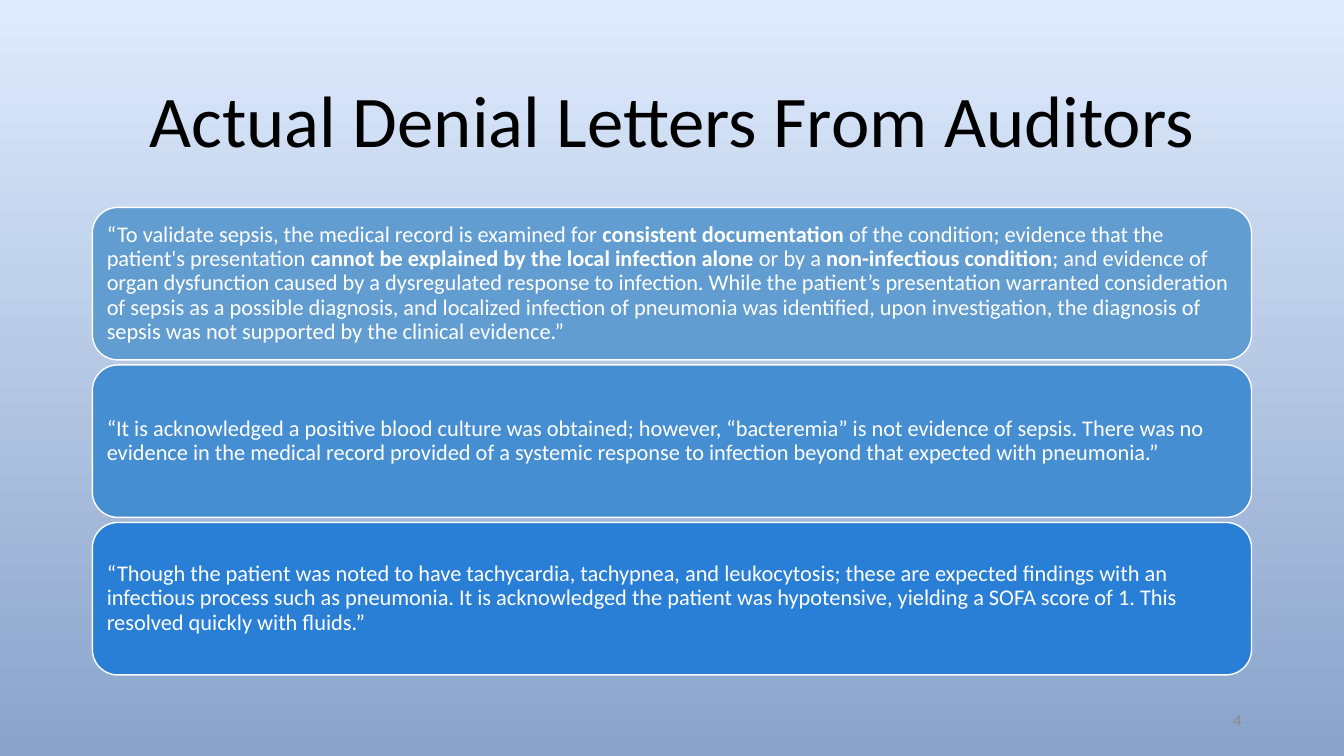
from dataclasses import dataclass

from pptx import Presentation
from pptx.dml.color import RGBColor
from pptx.enum.shapes import MSO_SHAPE
from pptx.enum.text import MSO_ANCHOR, MSO_AUTO_SIZE, PP_ALIGN
from pptx.util import Pt


@dataclass(frozen=True)
class Theme:
    font: str = "Calibri"
    title_size: float = 52
    body_size: float = 16
    number_size: float = 12
    title: str = "000000"
    light: str = "FFFFFF"
    number: str = "8B8B8B"
    bg_top: str = "DFEBFD"
    bg_bottom: str = "89A3CB"
    line_spacing: float = 0.9


@dataclass(frozen=True)
class Run:
    text: str
    bold: bool = False


@dataclass(frozen=True)
class Quote:
    fill: str
    runs: tuple[Run, ...]


THEME = Theme()
LEFT, WIDTH = 66, 828
CARD_TOP, CARD_HEIGHT, CARD_GAP = 148.2, 108.9, 3.6

QUOTES = (
    Quote("629DD1", (
        Run("“To validate sepsis, the medical record is examined for "),
        Run("consistent documentation ", True),
        Run("of the condition; evidence that the patient's presentation "),
        Run("cannot be explained by the local infection alone ", True),
        Run("or by a "),
        Run("non-infectious condition", True),
        Run("; and evidence of organ dysfunction caused by a dysregulated response "
            "to infection. While the patient’s presentation warranted consideration "
            "of sepsis as a possible diagnosis, and localized infection of pneumonia "
            "was identified, upon investigation, the diagnosis of sepsis was not "
            "supported by the clinical evidence.”"),
    )),
    Quote("468ED2", (
        Run("“It is acknowledged a positive blood culture was obtained; however, "
            "“bacteremia” is not evidence of sepsis. There was no evidence in the "
            "medical record provided of a systemic response to infection beyond that "
            "expected with pneumonia.”"),
    )),
    Quote("297FD5", (
        Run("“Though the patient was noted to have tachycardia, tachypnea, and "
            "leukocytosis; these are expected findings with an infectious process "
            "such as pneumonia. It is acknowledged the patient was hypotensive, "
            "yielding a SOFA score of 1. This resolved quickly with fluids.”"),
    )),
)


def rgb(value: str) -> RGBColor:
    return RGBColor.from_string(value)


def write(shape, runs: tuple[Run, ...], size: float, color: str,
          align: PP_ALIGN, inset: float) -> None:
    tf = shape.text_frame
    tf.word_wrap = True
    tf.auto_size = MSO_AUTO_SIZE.NONE
    tf.vertical_anchor = MSO_ANCHOR.MIDDLE
    tf.margin_left = tf.margin_right = tf.margin_top = tf.margin_bottom = Pt(inset)
    p = tf.paragraphs[0]
    p.alignment = align
    p.line_spacing = THEME.line_spacing
    for run in runs:
        r = p.add_run()
        r.text = run.text
        r.font.name = THEME.font
        r.font.size = Pt(size)
        r.font.bold = run.bold
        r.font.color.rgb = rgb(color)


def add_card(s, quote: Quote, top: float) -> None:
    sp = s.shapes.add_shape(MSO_SHAPE.ROUNDED_RECTANGLE,
                            Pt(LEFT), Pt(top), Pt(WIDTH), Pt(CARD_HEIGHT))
    sp.shadow.inherit = False
    sp.fill.solid()
    sp.fill.fore_color.rgb = rgb(quote.fill)
    sp.line.color.rgb = rgb(THEME.light)
    sp.line.width = Pt(1)
    write(sp, quote.runs, THEME.body_size, THEME.light, PP_ALIGN.LEFT, 5)


def main() -> None:
    prs = Presentation()
    prs.slide_width, prs.slide_height = Pt(960), Pt(540)
    s = prs.slides.add_slide(prs.slide_layouts[5])

    # Background
    fill = s.background.fill
    fill.gradient()
    fill.gradient_angle = 270
    for stop, color in zip(fill.gradient_stops, (THEME.bg_top, THEME.bg_bottom)):
        stop.color.rgb = rgb(color)

    # Title
    title = s.shapes.title
    title.left, title.top, title.width, title.height = Pt(LEFT), Pt(44), Pt(WIDTH), Pt(89)
    write(title, (Run("Actual Denial Letters From Auditors"),),
          THEME.title_size, THEME.title, PP_ALIGN.CENTER, 4)

    # Quote cards
    for i, quote in enumerate(QUOTES):
        add_card(s, quote, CARD_TOP + i * (CARD_HEIGHT + CARD_GAP))

    # Slide number
    number = s.shapes.add_textbox(Pt(678), Pt(500.5), Pt(216), Pt(28.75))
    write(number, (Run("4"),), THEME.number_size, THEME.number, PP_ALIGN.RIGHT, 7.2)

    prs.save("out.pptx")


if __name__ == "__main__":
    main()
